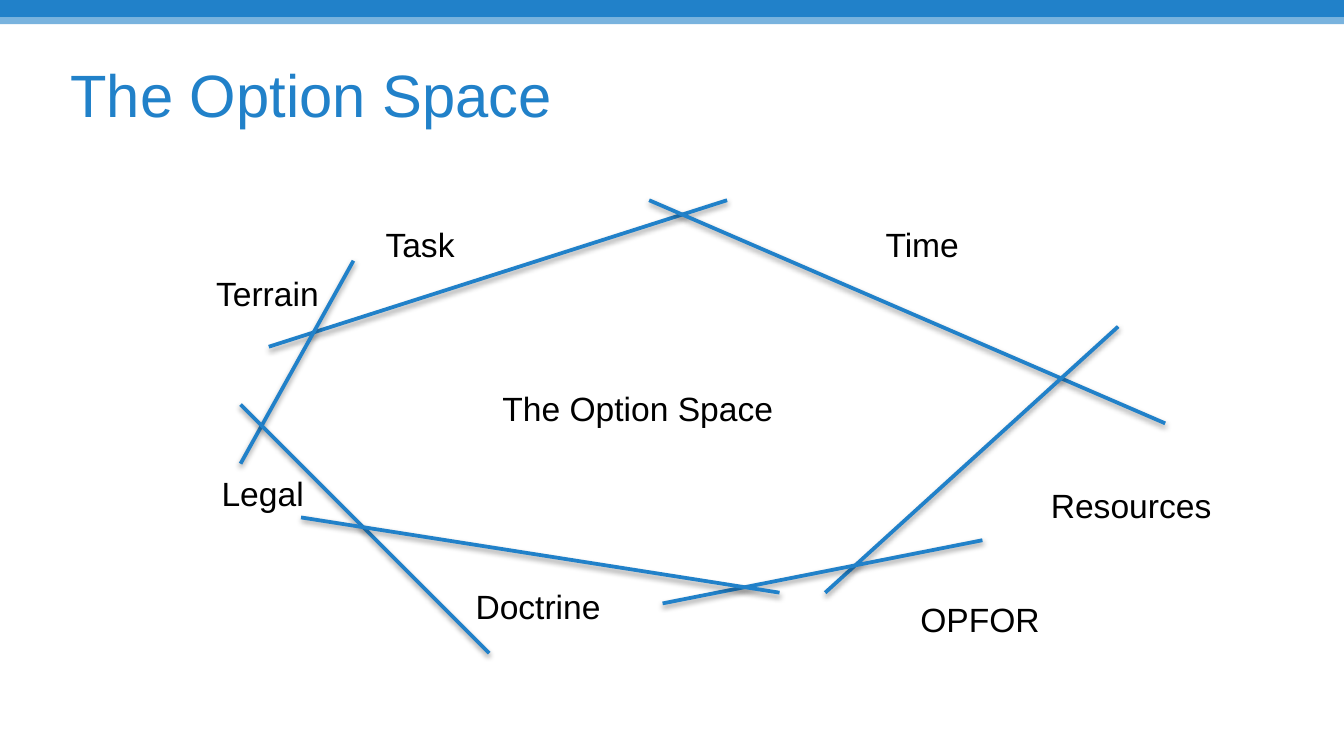
from typing import NamedTuple

from lxml import etree
from pptx import Presentation
from pptx.dml.color import RGBColor
from pptx.enum.shapes import MSO_CONNECTOR, MSO_SHAPE
from pptx.enum.text import MSO_ANCHOR, MSO_AUTO_SIZE
from pptx.oxml.ns import qn
from pptx.util import Inches, Length, Pt

RECT = MSO_SHAPE.RECTANGLE
STRAIGHT = MSO_CONNECTOR.STRAIGHT
MIDDLE = MSO_ANCHOR.MIDDLE
GROW = MSO_AUTO_SIZE.SHAPE_TO_FIT_TEXT

BLUE = RGBColor(0x21, 0x81, 0xC9)
BLACK = RGBColor(0, 0, 0)
FONT = "Arial"
COLUMNS = 100  # grid of square cells, a tenth of an inch each
LABEL_ROWS = 4


class Constraint(NamedTuple):
    """A boundary line, from and to in columns and rows."""
    x1: float
    y1: float
    x2: float
    y2: float


class Label(NamedTuple):
    """A one-line caption, placed in columns and rows."""
    text: str
    col: float
    row: float
    cols: float


CONSTRAINTS = [
    Constraint(20, 25.8, 54.1, 14.9),
    Constraint(48.3, 14.9, 86.7, 31.5),
    Constraint(83.2, 24.3, 61.4, 44.1),
    Constraint(26.3, 19.4, 17.9, 34.5),
    Constraint(17.9, 30.1, 36.4, 48.6),
    Constraint(73.1, 40.2, 49.3, 44.9),
    Constraint(22.4, 38.5, 58, 44.1),
]

LABELS = [
    Label("The Option Space", 36.4, 28.4, 22.4),
    Label("Task", 27.7, 16.2, 7.2),
    Label("Time", 64.9, 16.2, 7.5),
    Label("Resources", 77.2, 35.6, 14.1),
    Label("OPFOR", 67.5, 44.1, 11),
    Label("Doctrine", 34.4, 43.1, 11.4),
    Label("Legal", 15.5, 34.7, 8.2),
    Label("Terrain", 15.1, 19.8, 9.7),
]

prs = Presentation()
prs.slide_width = Inches(10)
prs.slide_height = prs.slide_width * 9 // 16
slide = prs.slides.add_slide(prs.slide_layouts[6])


def cells(n: float) -> Length:
    return Length(round(n * prs.slide_width / COLUMNS))


def add_alpha(color_el, percent: int) -> None:
    etree.SubElement(color_el, qn("a:alpha")).set("val", str(percent * 1000))


def add_band(row: float, rows: float, opacity: int = 100) -> None:
    s = slide.shapes.add_shape(RECT, 0, cells(row), prs.slide_width, cells(rows))
    s.shadow.inherit = False
    s.fill.solid()
    s.fill.fore_color.rgb = BLUE
    s.line.fill.background()
    if opacity < 100:
        add_alpha(s._element.spPr.find(qn("a:solidFill"))[0], opacity)


def add_constraint(c: Constraint) -> None:
    s = slide.shapes.add_connector(STRAIGHT, *map(cells, c))
    s.line.color.rgb = BLUE
    s.line.width = Pt(2)
    # Soft shadow straight below the line
    effects = etree.SubElement(s._element.spPr, qn("a:effectLst"))
    shadow = etree.SubElement(effects, qn("a:outerShdw"), blurRad=str(Pt(3.1)),
                              dist=str(Pt(1.6)), dir="5400000", rotWithShape="0")
    add_alpha(etree.SubElement(shadow, qn("a:srgbClr"), val=str(BLACK)), 38)


def add_text(label: Label, rows: float, size: int, color: RGBColor):
    s = slide.shapes.add_textbox(*map(cells, (label.col, label.row, label.cols, rows)))
    tf = s.text_frame
    tf.text = label.text
    font = tf.paragraphs[0].runs[0].font
    font.name, font.size = FONT, Pt(size)
    font.color.rgb = color
    return tf


# Header bands
add_band(0, 1.3)
add_band(1.3, 0.5, opacity=60)

# Title
title = add_text(Label("The Option Space", 4.25, 2.3, 90.8), 9.4, 32, BLUE)
title.word_wrap = True
title.vertical_anchor = MIDDLE

# Lines that bound the option space
for constraint in CONSTRAINTS:
    add_constraint(constraint)

# Captions
for label in LABELS:
    tf = add_text(label, LABEL_ROWS, 18, BLACK)
    tf.word_wrap = False
    tf.auto_size = GROW

prs.save("out.pptx")
